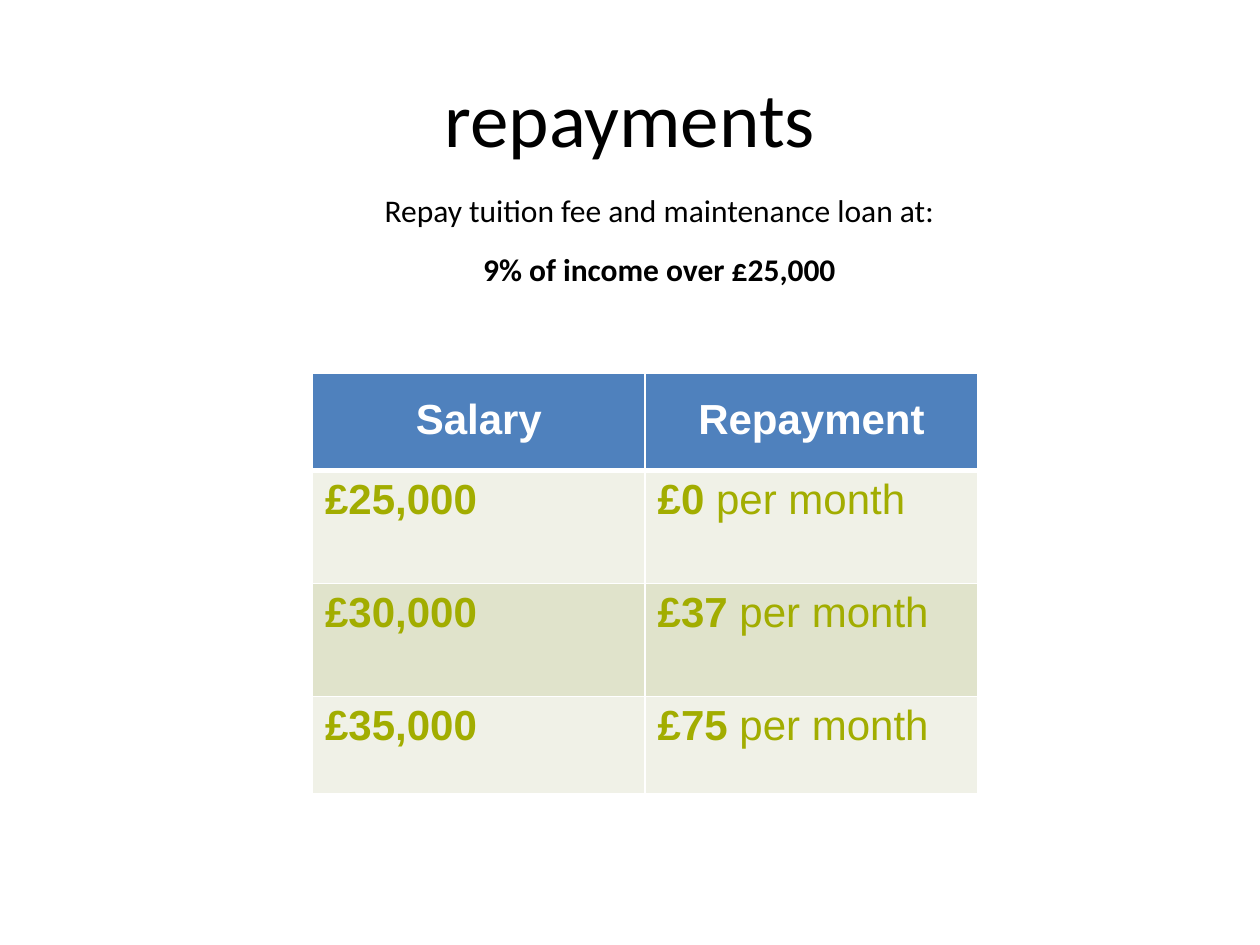
from lxml.etree import SubElement
from pptx import Presentation
from pptx.dml.color import RGBColor
from pptx.enum.text import MSO_ANCHOR, PP_ALIGN
from pptx.oxml.ns import qn
from pptx.util import Cm, Pt

BLACK = RGBColor(0x00, 0x00, 0x00)
WHITE = RGBColor(0xFF, 0xFF, 0xFF)
BLUE = RGBColor(0x4F, 0x81, 0xBD)
OLIVE = RGBColor(0xA2, 0xAD, 0x00)
PALE = RGBColor(0xF0, 0xF1, 0xE7)
SAGE = RGBColor(0xE0, 0xE3, 0xCB)

ROW_HEIGHTS = [1.96, 2.28, 2.28, 1.96]
HEADINGS = ["Salary", "Repayment"]
REPAYMENTS = [("£25,000", "£0"), ("£30,000", "£37"), ("£35,000", "£75")]


def add_text(paragraph, text, size=18, font="Calibri", color=BLACK,
             bold=False, align=PP_ALIGN.LEFT):
    paragraph.alignment = align
    run = paragraph.add_run()
    run.text = text
    run.font.size = Pt(size)
    run.font.name = font
    run.font.bold = bold
    run.font.color.rgb = color


def set_borders(cell, color=WHITE, **widths):
    properties = cell._tc.get_or_add_tcPr()
    for position, side in enumerate(("lnL", "lnR", "lnT", "lnB")):
        line = properties.makeelement(qn(f"a:{side}"), {"w": str(Pt(widths.get(side, 1)))})
        fill = SubElement(line, qn("a:solidFill"))
        SubElement(fill, qn("a:srgbClr"), val=str(color))
        properties.insert(position, line)


def add_title(slide, left, top, width, height):
    title = slide.shapes.title
    title.left, title.top = Cm(left), Cm(top)
    title.width, title.height = Cm(width), Cm(height)
    frame = title.text_frame
    frame.vertical_anchor = MSO_ANCHOR.MIDDLE
    add_text(frame.paragraphs[0], "repayments", size=44, align=PP_ALIGN.CENTER)


def add_terms(slide, left, top, width, height):
    box = slide.shapes.add_textbox(Cm(left), Cm(top), Cm(width), Cm(height))
    frame = box.text_frame
    frame.word_wrap = True
    add_text(frame.paragraphs[0], "Repay tuition fee and maintenance loan at:",
             align=PP_ALIGN.CENTER)
    rate = frame.add_paragraph()
    rate.space_before = Pt(12)
    add_text(rate, "9% of income over £25,000", bold=True, align=PP_ALIGN.CENTER)


def add_repayment_table(slide, left, top, width):
    frame = slide.shapes.add_table(len(ROW_HEIGHTS), len(HEADINGS), Cm(left), Cm(top),
                                   Cm(width), Cm(sum(ROW_HEIGHTS)))
    table = frame.table
    for row, height in zip(table.rows, ROW_HEIGHTS):
        row.height = Cm(height)
    for column in table.columns:
        column.width = Cm(width / len(HEADINGS))

    for cell, heading in zip(table.rows[0].cells, HEADINGS):
        cell.fill.solid()
        cell.fill.fore_color.rgb = BLUE
        cell.margin_top = Cm(0.47)
        set_borders(cell, lnB=3)
        add_text(cell.text_frame.paragraphs[0], heading, size=24, font="Arial",
                 color=WHITE, bold=True, align=PP_ALIGN.CENTER)

    for index, values in enumerate(REPAYMENTS, start=1):
        cells = list(table.rows[index].cells)
        for cell, value in zip(cells, values):
            cell.fill.solid()
            cell.fill.fore_color.rgb = PALE if index % 2 else SAGE
            set_borders(cell, lnT=3 if index == 1 else 1)
            add_text(cell.text_frame.paragraphs[0], value, size=24, font="Arial",
                     color=OLIVE, bold=True)
        add_text(cells[-1].text_frame.paragraphs[0], " per month", size=24,
                 font="Arial", color=OLIVE)


def main():
    presentation = Presentation()
    presentation.slide_width, presentation.slide_height = Cm(25.4), Cm(19.05)
    slide = presentation.slides.add_slide(presentation.slide_layouts[5])
    add_title(slide, 1.27, 0.76, 22.86, 3.18)
    add_terms(slide, 4.29, 3.73, 18.01, 3.73)
    add_repayment_table(slide, 6.3, 7.52, 13.41)
    presentation.save("out.pptx")


if __name__ == "__main__":
    main()
